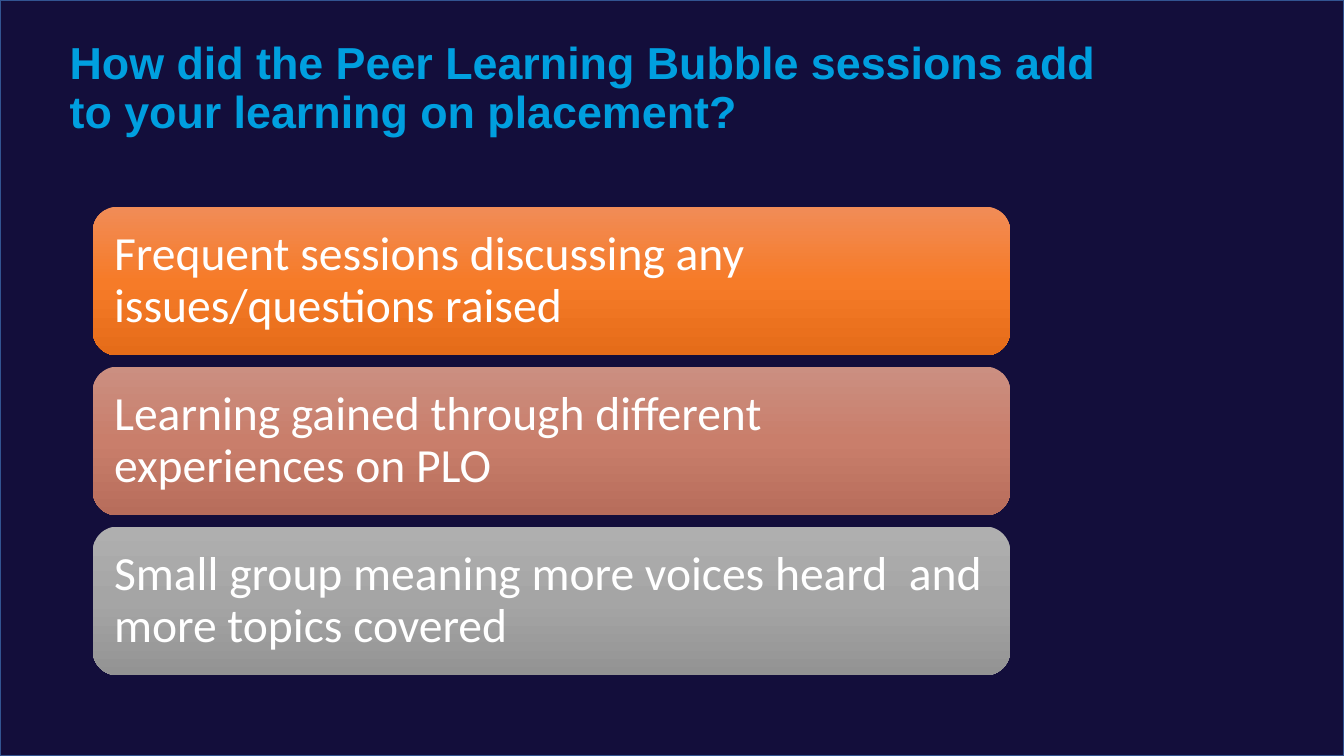
from copy import deepcopy

from pptx import Presentation
from pptx.dml.color import RGBColor
from pptx.enum.shapes import MSO_SHAPE
from pptx.enum.text import MSO_ANCHOR, MSO_AUTO_SIZE, PP_ALIGN
from pptx.oxml.ns import qn
from pptx.util import Inches, Pt

RECTANGLE = MSO_SHAPE.RECTANGLE
ROUNDED = MSO_SHAPE.ROUNDED_RECTANGLE
MIDDLE, BOTTOM = MSO_ANCHOR.MIDDLE, MSO_ANCHOR.BOTTOM
LEFT = PP_ALIGN.LEFT
NO_AUTOFIT = MSO_AUTO_SIZE.NONE

SLIDE_W, SLIDE_H = 13.33, 7.5
TITLE_ONLY = 5
CARD_GAP = 0.11
CARD_INSET = 0.14

COLORS = {"backdrop": "130E3B", "border": "325491", "title": "009FDF", "card_text": "FFFFFF"}
TITLE_FONT = {"name": "Arial", "size": Pt(32), "bold": True}
CARD_FONT = {"name": "Calibri", "size": Pt(34), "bold": False}

TITLE = "How did the Peer Learning Bubble sessions add to your learning on placement?"
# Each answer with its gradient from top to bottom
ANSWERS = [
    ("Frequent sessions discussing any issues/questions raised", ("F18C57", "F67B28", "E56C19")),
    ("Learning gained through different experiences on PLO", ("CB8F81", "C97E6B", "B76D5B")),
    ("Small group meaning more voices heard  and more topics covered", ("AFAFAF", "A5A5A5", "939393")),
]


def rgb(hex_value):
    return RGBColor.from_string(hex_value)


def write(frame, text, font_format, color, anchor):
    frame.word_wrap = True
    frame.auto_size = NO_AUTOFIT
    frame.vertical_anchor = anchor
    paragraph = frame.paragraphs[0]
    paragraph.text = text
    paragraph.alignment = LEFT
    paragraph.line_spacing = 0.9
    font = paragraph.runs[0].font
    for attribute, value in font_format.items():
        setattr(font, attribute, value)
    font.color.rgb = rgb(color)


def fill_gradient(shape, hex_stops):
    """Spread the colours evenly from top to bottom."""
    fill = shape.fill
    fill.gradient()
    fill.gradient_angle = 270
    stop_list = shape.element.spPr.find(qn("a:gradFill")).find(qn("a:gsLst"))
    while len(stop_list) < len(hex_stops):
        stop_list.append(deepcopy(stop_list[0]))
    for index, (stop, hex_value) in enumerate(zip(fill.gradient_stops, hex_stops)):
        stop.position = index / (len(hex_stops) - 1)
        stop.color.rgb = rgb(hex_value)


def add_backdrop(slide, left, top, width, height):
    backdrop = slide.shapes.add_shape(RECTANGLE, *map(Inches, (left, top, width, height)))
    backdrop.shadow.inherit = False
    backdrop.fill.solid()
    backdrop.fill.fore_color.rgb = rgb(COLORS["backdrop"])
    backdrop.line.color.rgb = rgb(COLORS["border"])
    backdrop.line.width = Pt(1)
    # Send behind the title
    slide.shapes.element.insert(2, backdrop.element)


def place_title(slide, left, top, width, height):
    title = slide.shapes.title
    box = {"left": left, "top": top, "width": width, "height": height}
    for attribute, value in box.items():
        setattr(title, attribute, Inches(value))
    write(title.text_frame, TITLE, TITLE_FONT, COLORS["title"], BOTTOM)


def add_answer_cards(slide, left, top, width, height):
    card_height = (height - CARD_GAP * (len(ANSWERS) - 1)) / len(ANSWERS)
    for row, (answer, hex_stops) in enumerate(ANSWERS):
        card_top = top + row * (card_height + CARD_GAP)
        card = slide.shapes.add_shape(
            ROUNDED, *map(Inches, (left, card_top, width, card_height)))
        card.shadow.inherit = False
        card.line.fill.background()
        fill_gradient(card, hex_stops)
        frame = card.text_frame
        for side in ("left", "top", "right", "bottom"):
            setattr(frame, f"margin_{side}", Inches(CARD_INSET))
        write(frame, answer, CARD_FONT, COLORS["card_text"], MIDDLE)


def main():
    prs = Presentation()
    prs.slide_width, prs.slide_height = Inches(SLIDE_W), Inches(SLIDE_H)
    slide = prs.slides.add_slide(prs.slide_layouts[TITLE_ONLY])
    add_backdrop(slide, 0, 0, SLIDE_W, SLIDE_H)
    place_title(slide, 0.59, 0, 10.59, 1.42)
    add_answer_cards(slide, 0.92, 2.05, 9.1, 4.65)
    prs.save("out.pptx")


if __name__ == "__main__":
    main()
